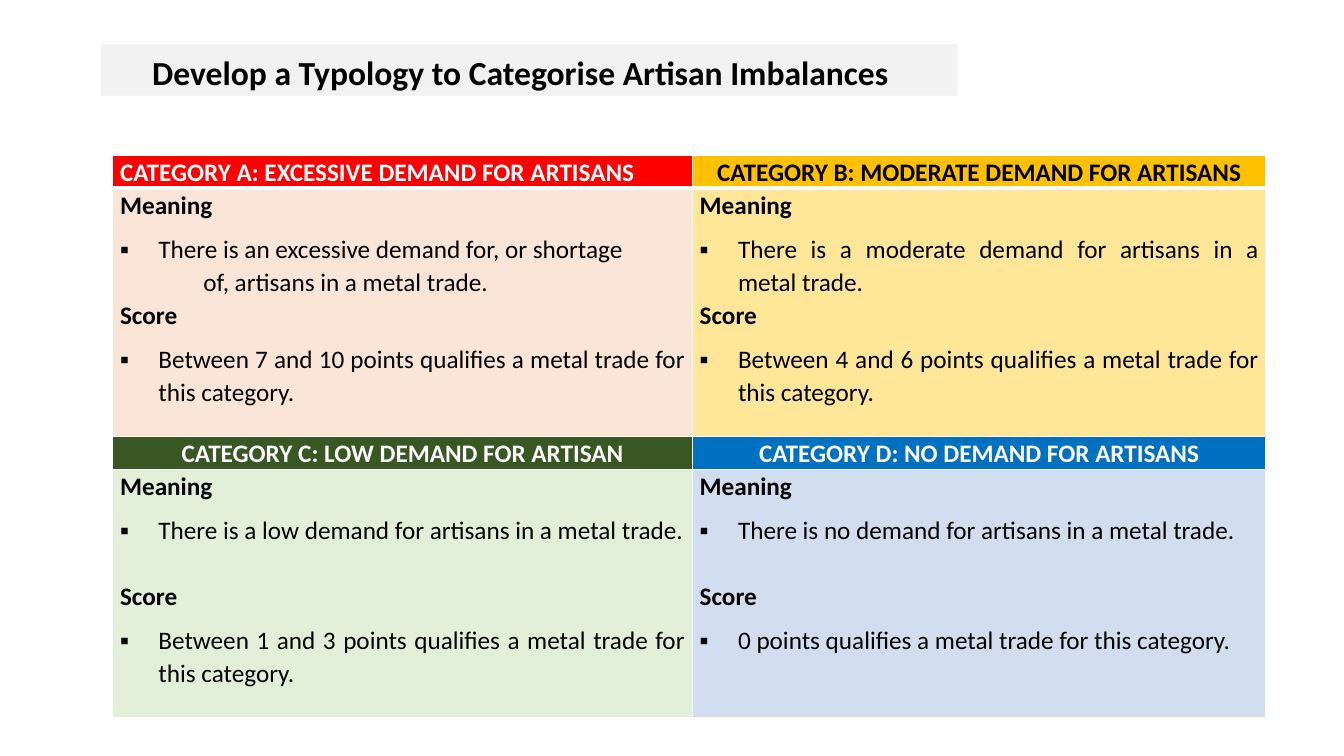
import pptx
import pptx.dml.color
import pptx.enum.text
import pptx.oxml
import pptx.util
from lxml import etree

Pt = pptx.util.Pt
ALIGN = pptx.enum.text.PP_ALIGN
ANCHOR = pptx.enum.text.MSO_ANCHOR
FONT = "Calibri"
LINE_SPACING = 1.07
LINE_HEIGHT = 23.5
BULLET_INDENT = 27.4
CONTINUATION_INDENT = 59.5

TITLE = "Develop a Typology to Categorise Artisan Imbalances"
TITLE_BOX = (72, 31.7, 612, 36.7)
TABLE_BOX = (80.6, 110.9, 823.7, 401.5)
COLUMN_WIDTHS = (414, 409.7)
ROW_HEIGHTS = (LINE_HEIGHT, 177.2, LINE_HEIGHT, 177.3)

# heading, heading colour, heading fill, heading alignment, body fill, meaning, score
CATEGORIES = [
    ("CATEGORY A: EXCESSIVE DEMAND FOR ARTISANS", "FFFFFF", "FF0000", ALIGN.LEFT, "FBE5D6",
     "There is an excessive demand for, or shortage\v\tof, artisans in a metal trade.",
     "Between 7 and 10 points qualifies a metal trade for this category."),
    ("CATEGORY B: MODERATE DEMAND FOR ARTISANS", "000000", "FFC000", ALIGN.CENTER, "FFE699",
     "There is a moderate demand for artisans in a metal trade.",
     "Between 4 and 6 points qualifies a metal trade for this category."),
    ("CATEGORY C: LOW DEMAND FOR ARTISAN", "FFFFFF", "385723", ALIGN.CENTER, "E2F0D9",
     "There is a low demand for artisans in a metal trade.",
     "Between 1 and 3 points qualifies a metal trade for this category."),
    ("CATEGORY D: NO DEMAND FOR ARTISANS", "FFFFFF", "0070C0", ALIGN.CENTER, "D2DEEF",
     "There is no demand for artisans in a metal trade.",
     "0 points qualifies a metal trade for this category."),
]


def colour(hex_string):
    return pptx.dml.color.RGBColor.from_string(hex_string)


def fill_solid(target, hex_string):
    target.fill.solid()
    target.fill.fore_color.rgb = colour(hex_string)


def write_paragraph(para, text, size=18, hex_string="000000", bold=True,
                    align=ALIGN.JUSTIFY, before=0, after=8):
    para.text = text
    para.alignment = align
    para.line_spacing = LINE_SPACING
    para.space_before = Pt(before)
    para.space_after = Pt(after)
    para.font.name = FONT
    para.font.size = Pt(size)
    para.font.bold = bold
    para.font.color.rgb = colour(hex_string)


def add_bullet(para):
    """Hang a square bullet, with a tab stop for a continued line."""
    properties = para._p.get_or_add_pPr()
    properties.set("marL", str(Pt(BULLET_INDENT)))
    properties.set("indent", str(-Pt(BULLET_INDENT)))
    namespace = pptx.oxml.ns.nsdecls("a")
    parts = [
        f'<a:buFont {namespace} typeface="Wingdings"/>'.replace("Wingdings", FONT),
        f'<a:buChar {namespace} char="▪"/>',
        f'<a:tabLst {namespace}><a:tab pos="{Pt(CONTINUATION_INDENT)}" algn="l"/></a:tabLst>',
    ]
    run_defaults = properties.find(pptx.oxml.ns.qn("a:defRPr"))
    for part in parts:
        run_defaults.addprevious(pptx.oxml.parse_xml(part))


def set_borders(cell, bottom_width):
    properties = cell._tc.get_or_add_tcPr()
    for side, width in (("lnL", 1), ("lnR", 1), ("lnT", 1), ("lnB", bottom_width)):
        line = etree.SubElement(properties, pptx.oxml.ns.qn(f"a:{side}"), w=str(Pt(width)))
        fill = etree.SubElement(line, pptx.oxml.ns.qn("a:solidFill"))
        etree.SubElement(fill, pptx.oxml.ns.qn("a:srgbClr"), val="FFFFFF")


def format_cell(cell, hex_string, bottom_width=1):
    cell.margin_left = cell.margin_right = Pt(5.2)
    cell.margin_top = cell.margin_bottom = 0
    cell.vertical_anchor = ANCHOR.TOP
    set_borders(cell, bottom_width)
    fill_solid(cell, hex_string)


def write_body(cell, meaning, score, score_gap):
    """Write the two headed bullets, with score_gap above the second heading."""
    frame = cell.text_frame
    write_paragraph(frame.paragraphs[0], "Meaning")
    for heading, text in ((None, meaning), ("Score", score)):
        if heading:
            write_paragraph(frame.add_paragraph(), heading, before=score_gap)
        para = frame.add_paragraph()
        align = ALIGN.LEFT if "\v" in text else ALIGN.JUSTIFY
        write_paragraph(para, text, bold=False, align=align, after=0)
        add_bullet(para)


def place_title(slide, box):
    title = slide.shapes.title
    title.left, title.top, title.width, title.height = map(Pt, box)
    fill_solid(title, "F2F2F2")
    frame = title.text_frame
    frame.auto_size = pptx.enum.text.MSO_AUTO_SIZE.NONE
    frame.vertical_anchor = ANCHOR.TOP
    frame.word_wrap = True
    frame.margin_left = frame.margin_right = Pt(7.2)
    frame.margin_top = frame.margin_bottom = Pt(3.6)
    para = frame.paragraphs[0]
    write_paragraph(para, TITLE, size=24, align=ALIGN.LEFT)
    para._p.get_or_add_pPr().set("marL", str(Pt(29.5)))


def place_typology(slide, box):
    table = slide.shapes.add_table(len(ROW_HEIGHTS), len(COLUMN_WIDTHS), *map(Pt, box)).table
    table.first_row = table.horz_banding = False
    for column, width in zip(table.columns, COLUMN_WIDTHS):
        column.width = Pt(width)
    for row, height in zip(table.rows, ROW_HEIGHTS):
        row.height = Pt(height)
    for index, category in enumerate(CATEGORIES):
        heading, text_colour, heading_fill, align, body_fill, meaning, score = category
        band, column = divmod(index, len(COLUMN_WIDTHS))
        header = table.cell(2 * band, column)
        format_cell(header, heading_fill, bottom_width=1 if band else 3)
        write_paragraph(header.text_frame.paragraphs[0], heading,
                        hex_string=text_colour, align=align, after=0)
        body = table.cell(2 * band + 1, column)
        format_cell(body, body_fill)
        write_body(body, meaning, score, score_gap=LINE_HEIGHT * band)


def main():
    deck = pptx.Presentation()
    deck.slide_width, deck.slide_height = Pt(960), Pt(540)
    slide = deck.slides.add_slide(deck.slide_layouts[5])
    place_title(slide, TITLE_BOX)
    place_typology(slide, TABLE_BOX)
    deck.save("out.pptx")


if __name__ == "__main__":
    main()
